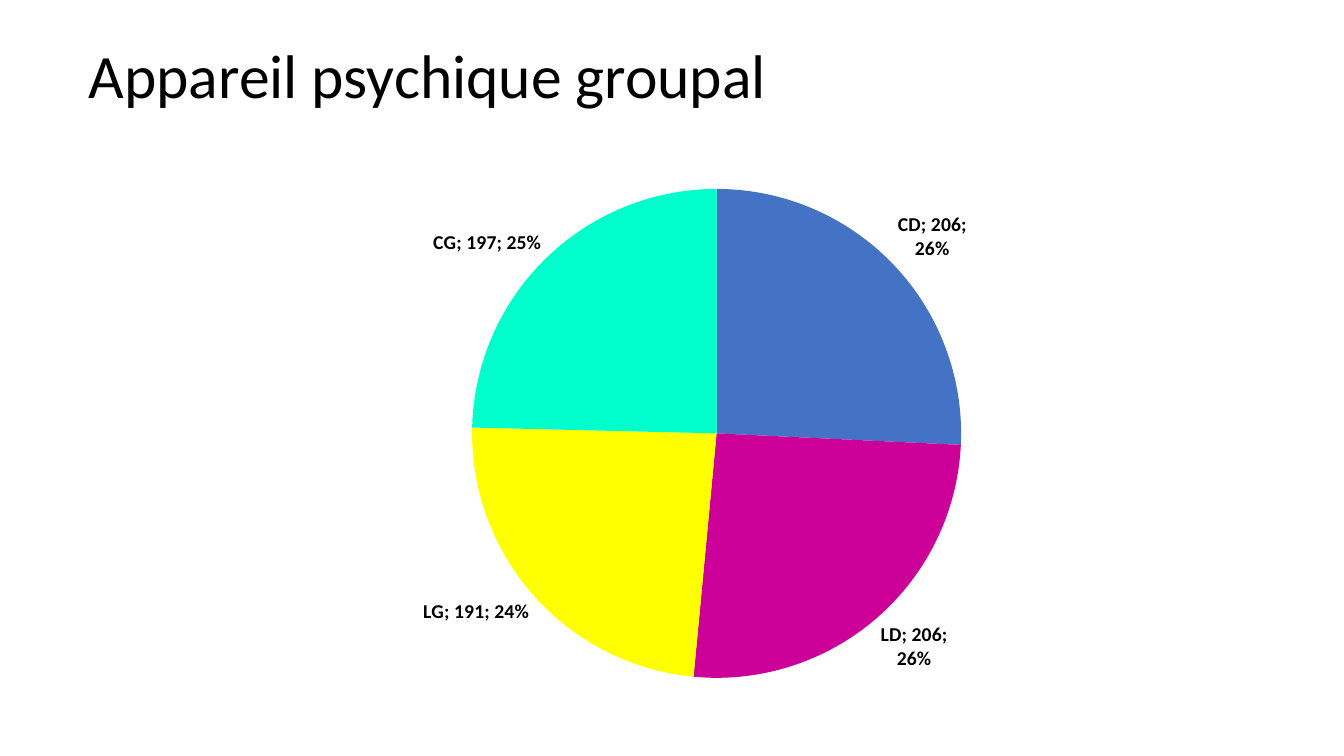
from lxml import etree
from pptx import Presentation
from pptx.chart.data import CategoryChartData
from pptx.dml.color import RGBColor
from pptx.enum.chart import XL_CHART_TYPE, XL_LABEL_POSITION
from pptx.enum.text import MSO_ANCHOR
from pptx.oxml import parse_xml
from pptx.oxml.ns import qn
from pptx.util import Inches, Pt

FONT = "Calibri"
COLOURS = {
    "text": "000000",
    "CD": "4472C4",
    "LD": "CC0099",
    "LG": "FFFF00",
    "CG": "00FFCC",
}
SCORES = {"CD": 206, "LD": 206, "LG": 191, "CG": 197}
PIE_AREA = {"x": 0.147, "y": 0.118, "w": 0.79, "h": 0.79}


def colour(name):
    return RGBColor.from_string(COLOURS[name])


def format_font(font, **values):
    for name, value in {"name": FONT, **values}.items():
        setattr(font, name, value)
    font.color.rgb = colour("text")


def add_title(slide, text, left, top, width, height):
    box = slide.shapes.add_textbox(
        Inches(left), Inches(top), Inches(width), Inches(height))
    frame = box.text_frame
    frame.word_wrap = True
    frame.vertical_anchor = MSO_ANCHOR.MIDDLE
    paragraph = frame.paragraphs[0]
    paragraph.line_spacing = 0.9
    run = paragraph.add_run()
    run.text = text
    format_font(run.font, size=Pt(44))


def place_plot(chart, area):
    """Fix the inner plot area, given as fractions of the chart frame."""
    plot_area = chart.plots[0]._element.getparent()
    for old_layout in plot_area.findall(qn("c:layout")):
        plot_area.remove(old_layout)
    layout = parse_xml(
        '<c:layout xmlns:c="http://schemas.openxmlformats.org/drawingml/2006/chart">'
        '<c:manualLayout><c:layoutTarget val="inner"/>'
        '<c:xMode val="edge"/><c:yMode val="edge"/></c:manualLayout></c:layout>')
    for name, value in area.items():
        etree.SubElement(layout[0], qn(f"c:{name}")).set("val", str(value))
    plot_area.insert(0, layout)


def label_slices(plot):
    plot.has_data_labels = True
    labels = plot.data_labels
    format_font(labels.font, size=Pt(14), bold=True)
    settings = {
        "show_category_name": True,
        "show_value": True,
        "show_percentage": True,
        "position": XL_LABEL_POSITION.OUTSIDE_END,
    }
    for name, value in settings.items():
        setattr(labels, name, value)
    separator = etree.Element(qn("c:separator"))
    separator.text = "; "
    labels._element.find(qn("c:showPercent")).addnext(separator)
    bubble_size = labels._element.find(qn("c:showBubbleSize"))
    if bubble_size is not None:
        bubble_size.addnext(separator)


def add_pie(slide, scores, left, top, width, height):
    data = CategoryChartData()
    data.categories = list(scores)
    data.add_series("Series 1", list(scores.values()))
    chart = slide.shapes.add_chart(
        XL_CHART_TYPE.PIE, Inches(left), Inches(top),
        Inches(width), Inches(height), data).chart
    chart.has_title = False
    chart.has_legend = False
    format_font(chart.font, size=Pt(10.5))
    plot = chart.plots[0]
    plot.vary_by_categories = True
    for index, category in enumerate(scores):
        fill = plot.series[0].points[index].format.fill
        fill.solid()
        fill.fore_color.rgb = colour(category)
    label_slices(plot)
    place_plot(chart, PIE_AREA)


def main():
    presentation = Presentation()
    presentation.slide_width = Inches(13.33)
    presentation.slide_height = Inches(7.5)
    slide = presentation.slides.add_slide(presentation.slide_layouts[6])
    add_title(slide, "Appareil psychique groupal", 0.78, 0.05, 11.5, 1.45)
    add_pie(slide, SCORES, 3.78, 1.14, 6.14, 6.16)
    presentation.save("out.pptx")


if __name__ == "__main__":
    main()
